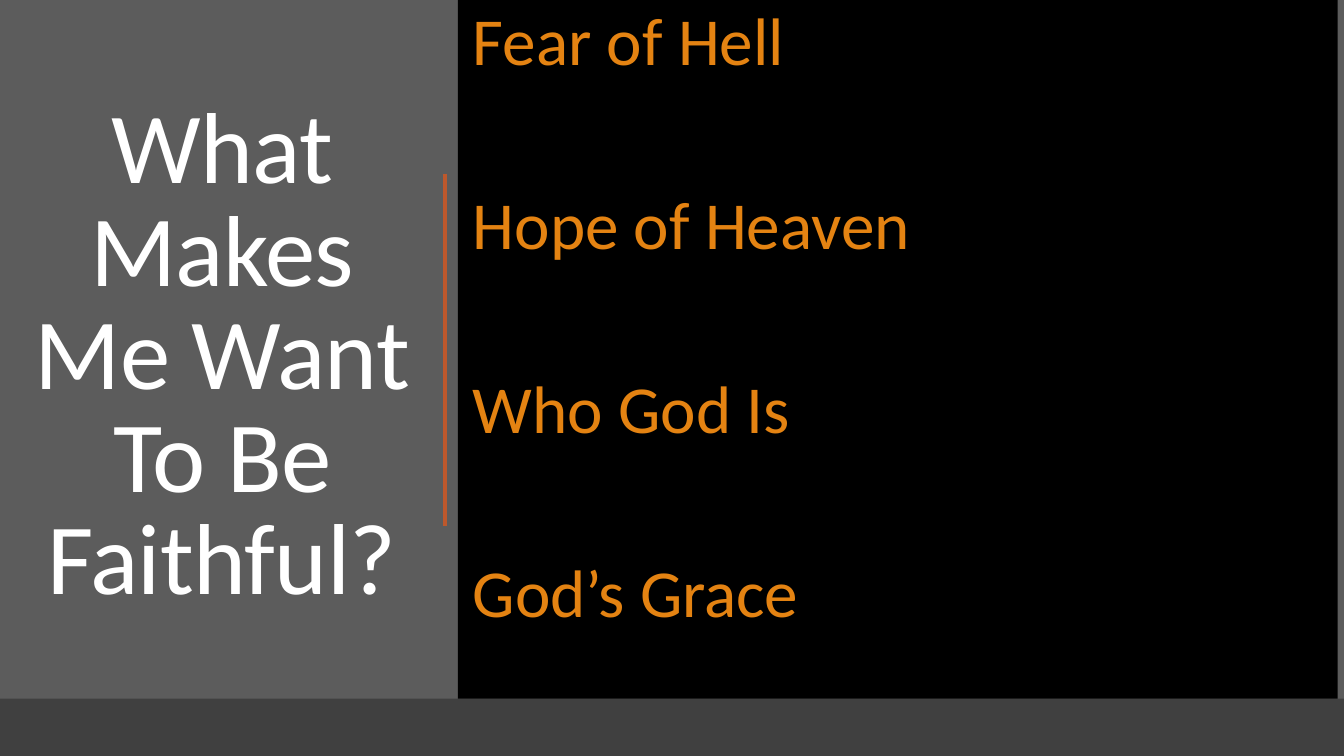
import pptx
import pptx.util
import pptx.dml.color
import pptx.enum.shapes
import pptx.enum.text
from pptx.oxml.ns import qn
from lxml import etree

Pt = pptx.util.Pt
ALIGN = pptx.enum.text.PP_ALIGN
ANCHOR = pptx.enum.text.MSO_ANCHOR

COLORS = {"background": "5C5C5C", "footer": "404040", "panel": "000000",
          "rule": "BD582C", "title": "FFFFFF", "reason": "E48312"}
WIDTH, HEIGHT = 960, 540
FOOTER_TOP = 499
TITLE = "What Makes Me Want To Be Faithful?"
REASONS = ["Fear of Hell", "Hope of Heaven", "Who God Is", "God’s Grace"]


def rgb(name):
    return pptx.dml.color.RGBColor.from_string(COLORS[name])


def set_all(obj, values):
    for name, value in values.items():
        setattr(obj, name, value)


def add_bar(s, box, color):
    sp = s.shapes.add_shape(pptx.enum.shapes.MSO_SHAPE.RECTANGLE, *map(Pt, box))
    sp.shadow.inherit = False
    sp.fill.solid()
    sp.fill.fore_color.rgb = rgb(color)
    sp.line.fill.background()
    return sp


def add_paragraph(p, text, size, color, paragraph_format):
    set_all(p, paragraph_format)
    r = p.add_run()
    r.text = text
    set_all(r.font, {"name": "Calibri", "size": Pt(size)})
    r.font.color.rgb = rgb(color)
    return r


def add_title(s, box):
    x, y, w, h = box
    tf = s.shapes.add_textbox(*map(Pt, box)).text_frame
    set_all(tf, {"word_wrap": True, "vertical_anchor": ANCHOR.MIDDLE})
    r = add_paragraph(tf.paragraphs[0], TITLE, 72, "title",
                      {"alignment": ALIGN.CENTER, "line_spacing": 0.85})
    r.font._element.set("spc", "-50")

    # Rule to the right of the title
    rule_x = x + w + 8
    line = s.shapes.add_connector(pptx.enum.shapes.MSO_CONNECTOR.STRAIGHT,
                                  Pt(rule_x), Pt(y + 73.5), Pt(rule_x), Pt(y + 325.5))
    line.line.color.rgb = rgb("rule")
    line.line.width = Pt(2.5)
    etree.SubElement(line._element.spPr, qn("a:effectLst"))


def add_reasons(s, box):
    tf = add_bar(s, box, "panel").text_frame
    set_all(tf, {"word_wrap": True, "vertical_anchor": ANCHOR.TOP,
                 "margin_left": Pt(10.8), "margin_right": 0,
                 "margin_top": Pt(5), "margin_bottom": Pt(3.6)})
    for i, reason in enumerate(REASONS):
        p = tf.add_paragraph() if i else tf.paragraphs[0]
        add_paragraph(p, reason, 48, "reason",
                      {"alignment": ALIGN.LEFT, "line_spacing": 0.9,
                       "space_after": Pt(79.8)})


def main():
    prs = pptx.Presentation()
    set_all(prs, {"slide_width": Pt(WIDTH), "slide_height": Pt(HEIGHT)})
    s = prs.slides.add_slide(prs.slide_layouts[6])

    # Background and footer band
    s.background.fill.solid()
    s.background.fill.fore_color.rgb = rgb("background")
    add_bar(s, (0, FOOTER_TOP, WIDTH, HEIGHT - FOOTER_TOP), "footer")

    # Title on the left, reasons on the right
    add_title(s, (7, 50.5, 303, 411))
    add_reasons(s, (327, 0, 628.5, FOOTER_TOP))

    prs.save("out.pptx")


if __name__ == "__main__":
    main()
